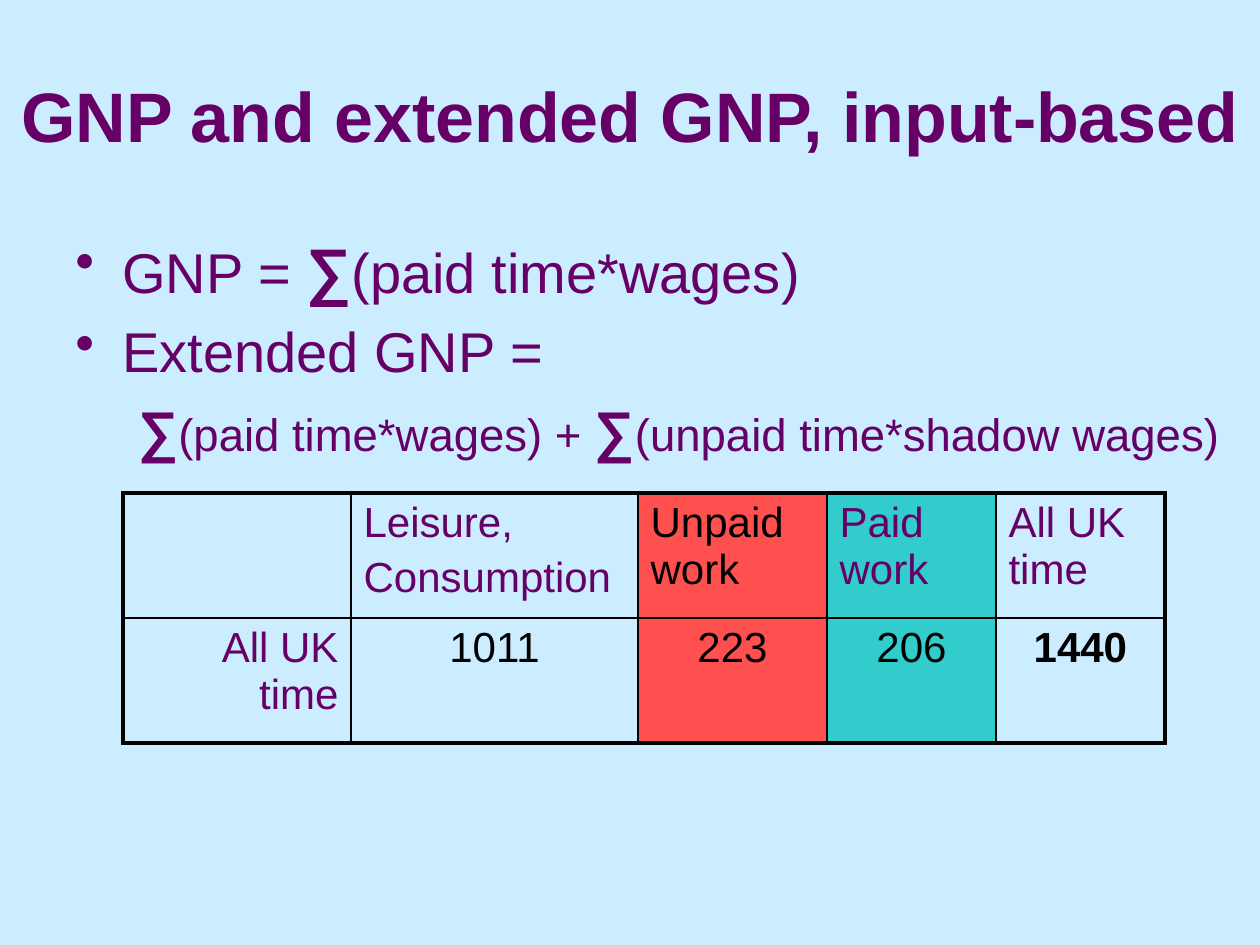
import pptx
import pptx.util
import pptx.dml.color
import pptx.enum.text
import pptx.oxml
import pptx.oxml.ns

EMU_PER_PX = 914400 / 126
FONT = "Arial"
COLORS = {
    "background": "CCECFF",
    "purple": "660066",
    "black": "000000",
    "red": "FF5050",
    "teal": "33CCCC",
}
ALIGN = pptx.enum.text.PP_ALIGN


def px(length):
    return pptx.util.Emu(round(length * EMU_PER_PX))


def rgb(name):
    return pptx.dml.color.RGBColor.from_string(COLORS[name])


def style_font(font, size, color="purple", bold=False):
    font.name = FONT
    font.size = pptx.util.Pt(size)
    font.bold = bold
    font.color.rgb = rgb(color)


def add_box(page, left, top, width, height):
    box = page.shapes.add_textbox(px(left), px(top), px(width), px(height))
    box.text_frame.word_wrap = True
    return box.text_frame


def add_paragraph(frame, index, space):
    """Return the paragraph at index, spaced from the one above it."""
    if index == 0:
        return frame.paragraphs[0]
    para = frame.add_paragraph()
    para.space_before = pptx.util.Pt(space)
    return para


def set_indent(para, margin, hanging, bullet=None):
    properties = para._p.get_or_add_pPr()
    properties.set("marL", str(px(margin)))
    properties.set("indent", str(px(-hanging)))
    tag = f'a:buChar char="{bullet}"' if bullet else "a:buNone"
    properties.append(
        pptx.oxml.parse_xml(f'<{tag} {pptx.oxml.ns.nsdecls("a")}/>'))


def add_title(page, text):
    frame = add_box(page, 0, 35, 1260, 158)
    frame.vertical_anchor = pptx.enum.text.MSO_ANCHOR.MIDDLE
    para = frame.paragraphs[0]
    para.text = text
    para.alignment = ALIGN.CENTER
    style_font(para.font, 40, bold=True)


def add_formulas(page, formulas):
    """Each formula is (margin, hanging, bullet, [(text, size, bold), ...])."""
    frame = add_box(page, 63, 224, 1172, 277)
    for index, (margin, hanging, bullet, spans) in enumerate(formulas):
        para = add_paragraph(frame, index, 6.4)
        set_indent(para, margin, hanging, bullet)
        for text, size, bold in spans:
            span = para.add_run()
            span.text = text
            style_font(span.font, size, bold=bold)


def set_borders(cell, widths):
    properties = cell._tc.get_or_add_tcPr()
    for index, (side, width) in enumerate(zip("LRTB", widths)):
        properties.insert(index, pptx.oxml.parse_xml(
            f'<a:ln{side} {pptx.oxml.ns.nsdecls("a")} w="{pptx.util.Pt(width)}">'
            f'<a:solidFill><a:srgbClr val="{COLORS["black"]}"/></a:solidFill>'
            f'</a:ln{side}>'))


def fill_cell(cell, fill, text, align, color, bold):
    if fill:
        cell.fill.solid()
        cell.fill.fore_color.rgb = rgb(fill)
    else:
        cell.fill.background()
    for index, line in enumerate(text.split("\n")):
        para = add_paragraph(cell.text_frame, index, 4.8)
        para.text = line
        para.alignment = align
        style_font(para.font, 24, color, bold)


def add_time_table(page, rows, widths, fills, row_height):
    frame = page.shapes.add_table(
        len(rows), len(widths), px(123), px(493),
        px(sum(widths)), px(row_height * len(rows)))
    table = frame.table
    table.first_row = False
    table.horz_banding = False
    for column, width in zip(table.columns, widths):
        column.width = px(width)
    last_row, last_column = len(rows) - 1, len(widths) - 1
    for r, row in enumerate(rows):
        table.rows[r].height = px(row_height)
        for c, content in enumerate(row):
            cell = table.cell(r, c)
            fill_cell(cell, fills[c], *content)
            # Heavy rule around the table, thin rules inside
            outer = (c == 0, c == last_column, r == 0, r == last_row)
            set_borders(cell, [2.25 if edge else 1 for edge in outer])


def main():
    deck = pptx.Presentation()
    deck.slide_width, deck.slide_height = px(1260), px(945)
    page = deck.slides.add_slide(deck.slide_layouts[6])
    page.background.fill.solid()
    page.background.fill.fore_color.rgb = rgb("background")

    add_title(page, "GNP and extended GNP, input-based")

    # Definitions of the two measures
    add_formulas(page, [
        (47, 47, "•", [("GNP = ", 32, False), ("∑", 36, True),
                       ("(paid time*wages)", 32, False)]),
        (47, 47, "•", [("Extended GNP =", 32, False)]),
        (102, 39, None, [("∑", 32, True), ("(paid time*wages) + ", 26, False),
                         ("∑", 32, True),
                         ("(unpaid time*shadow wages)", 26, False)]),
    ])

    # Minutes per day by use of time
    header = [("", "purple"), ("Leisure,\nConsumption", "purple"),
              ("Unpaid work", "black"), ("Paid work", "purple"),
              ("All UK time", "purple")]
    values = [("1011", False), ("223", False), ("206", False), ("1440", True)]
    rows = [
        [(text, ALIGN.LEFT, color, False) for text, color in header],
        [("All UK time", ALIGN.RIGHT, "purple", False)]
        + [(text, ALIGN.CENTER, "black", bold) for text, bold in values],
    ]
    add_time_table(page, rows, widths=[228, 287, 189, 169, 169],
                   fills=[None, None, "red", "teal", None], row_height=125)

    deck.save("out.pptx")


if __name__ == "__main__":
    main()
